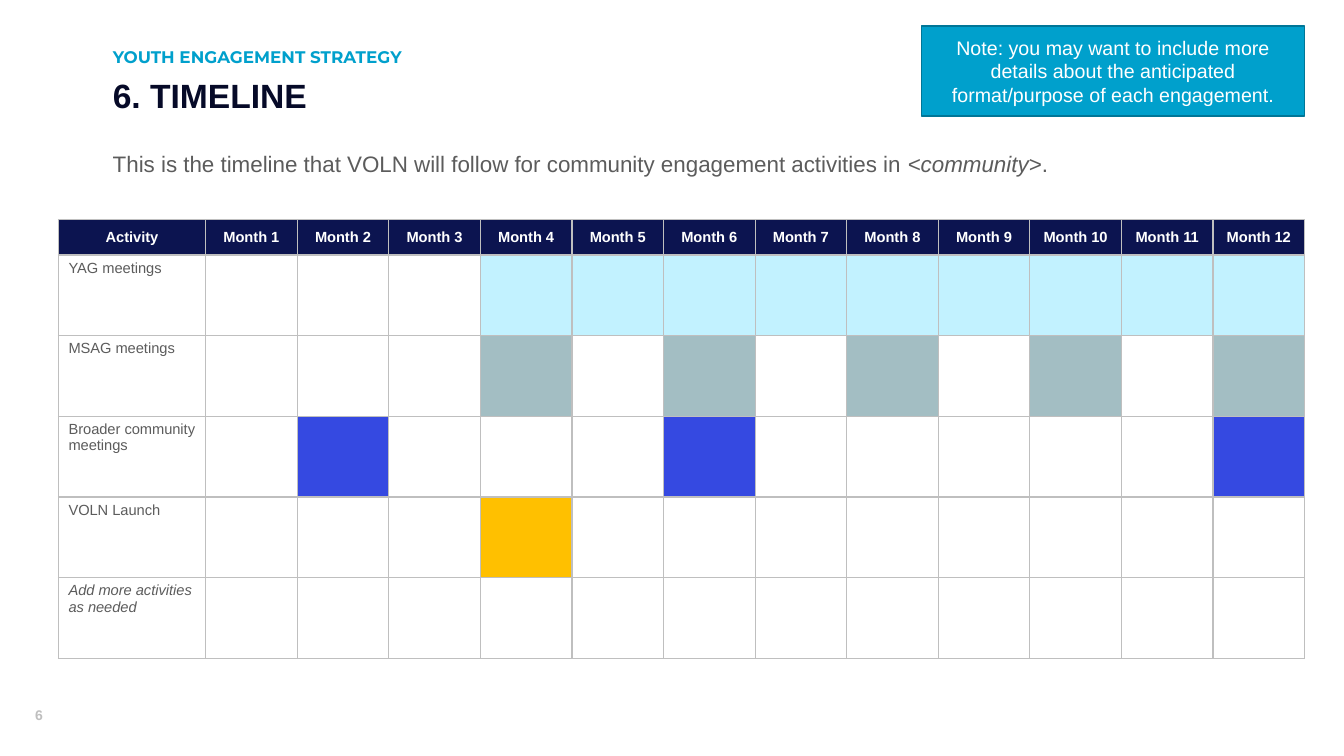
"""Build the engagement timeline slide with its twelve-month activity table."""
from dataclasses import dataclass

from lxml import etree
from pptx import Presentation
from pptx.dml.color import RGBColor
from pptx.enum.shapes import MSO_SHAPE
from pptx.enum.text import MSO_ANCHOR, PP_ALIGN
from pptx.oxml.ns import qn
from pptx.util import Inches, Pt

CENTER = PP_ALIGN.CENTER
LEFT = PP_ALIGN.LEFT
MIDDLE = MSO_ANCHOR.MIDDLE
TOP = MSO_ANCHOR.TOP
RECTANGLE = MSO_SHAPE.RECTANGLE

WHITE = "FFFFFF"
NAVY = "0C1450"
INK = "060A28"
CYAN = "00A0CC"
TEAL = "007697"
GRAY = "5C5C5C"
SILVER = "BFBFBF"

MONTH_COUNT = 12
TABLE_LEFT, TABLE_TOP, TABLE_WIDTH = 0.58, 2.18, 12.36
ACTIVITY_WIDTH, HEADER_HEIGHT, ROW_HEIGHT = 1.46, 0.35, 0.8


@dataclass(frozen=True)
class Span:
    text: str
    italic: bool = False


@dataclass(frozen=True)
class Label:
    left: float
    top: float
    width: float
    height: float
    spans: tuple[Span, ...]
    size: float
    color: str
    bold: bool = False
    font: str = "Arial"
    anchor: MSO_ANCHOR = TOP
    line_spacing: float = 0.9


@dataclass(frozen=True)
class Activity:
    name: str
    color: str = WHITE
    months: tuple[int, ...] = ()
    italic: bool = False


LABELS = (
    Label(0.25, 6.96, 0.53, 0.27, (Span("6"),), 10, SILVER, bold=True,
          anchor=MIDDLE, line_spacing=1.0),
    Label(1.02, 0.74, 5.38, 1.45, (Span("6. TIMELINE"),), 24, INK, bold=True),
    Label(1.02, 0.46, 4.05, 0.23, (Span("YOUTH ENGAGEMENT STRATEGY"),), 12, CYAN,
          bold=True, font="Montserrat", anchor=MIDDLE),
    Label(1.02, 1.47, 11.3, 4.3,
          (Span("This is the timeline that VOLN will follow for community "
                "engagement activities in "),
           Span("<community>", italic=True), Span(".")), 16, GRAY),
)

ACTIVITIES = (
    Activity("YAG meetings", "C2F2FF", tuple(range(4, 13))),
    Activity("MSAG meetings", "A3BEC3", tuple(range(4, 13, 2))),
    Activity("Broader community meetings", "3549E1", (2, 6, 12)),
    Activity("VOLN Launch", "FFC000", (4,)),
    Activity("Add more activities as needed", italic=True),
)


def rgb(color: str) -> RGBColor:
    """Turn a hex string into a colour."""
    return RGBColor.from_string(color)


def add_span(para, text: str, *, size: float, color: str, font: str = "Arial",
             bold: bool = False, italic: bool = False) -> None:
    """Append formatted text to a paragraph."""
    span = para.add_run()
    span.text = text
    span.font.name = font
    span.font.size = Pt(size)
    span.font.bold = bold
    span.font.italic = italic
    span.font.color.rgb = rgb(color)


def add_label(page, label: Label) -> None:
    """Draw one free-standing text box."""
    box = page.shapes.add_textbox(Inches(label.left), Inches(label.top),
                                  Inches(label.width), Inches(label.height))
    frame = box.text_frame
    frame.word_wrap = True
    frame.vertical_anchor = label.anchor
    para = frame.paragraphs[0]
    para.line_spacing = label.line_spacing
    for span in label.spans:
        add_span(para, span.text, size=label.size, color=label.color,
                 font=label.font, bold=label.bold, italic=span.italic)


def add_note(page, text: str) -> None:
    """Draw the note in the top right corner."""
    box = page.shapes.add_shape(RECTANGLE, Inches(9.14), Inches(0.26),
                                Inches(3.8), Inches(0.89))
    box.shadow.inherit = False
    box.fill.solid()
    box.fill.fore_color.rgb = rgb(CYAN)
    box.line.color.rgb = rgb(TEAL)
    box.line.width = Pt(1)
    box.text_frame.word_wrap = True
    box.text_frame.vertical_anchor = MIDDLE
    para = box.text_frame.paragraphs[0]
    para.alignment = CENTER
    add_span(para, text, size=14, color=WHITE)


def style_cell(cell, color: str) -> None:
    """Give a cell its four borders and its fill."""
    properties = cell._tc.get_or_add_tcPr()
    for side in ("lnL", "lnR", "lnT", "lnB"):
        border = etree.SubElement(properties, qn(f"a:{side}"), w=str(Pt(1)))
        fill = etree.SubElement(border, qn("a:solidFill"))
        etree.SubElement(fill, qn("a:srgbClr"), val=SILVER)
    cell.fill.solid()
    cell.fill.fore_color.rgb = rgb(color)


def write_cell(cell, text: str, *, color: str, bold: bool = False,
               italic: bool = False, align: PP_ALIGN = LEFT,
               anchor: MSO_ANCHOR = TOP) -> None:
    """Write formatted text into a cell."""
    cell.vertical_anchor = anchor
    para = cell.text_frame.paragraphs[0]
    para.alignment = align
    add_span(para, text, size=10.5, color=color, bold=bold, italic=italic)


def add_timeline(page) -> None:
    """Draw the table of activities by month."""
    height = HEADER_HEIGHT + ROW_HEIGHT * len(ACTIVITIES)
    table = page.shapes.add_table(
        len(ACTIVITIES) + 1, MONTH_COUNT + 1, Inches(TABLE_LEFT),
        Inches(TABLE_TOP), Inches(TABLE_WIDTH), Inches(height)).table
    table.horz_banding = False
    month_width = (TABLE_WIDTH - ACTIVITY_WIDTH) / MONTH_COUNT
    for index, column in enumerate(table.columns):
        column.width = Inches(month_width if index else ACTIVITY_WIDTH)
    for index, row in enumerate(table.rows):
        row.height = Inches(ROW_HEIGHT if index else HEADER_HEIGHT)

    for month in range(MONTH_COUNT + 1):
        cell = table.cell(0, month)
        style_cell(cell, NAVY)
        write_cell(cell, f"Month {month}" if month else "Activity", color=WHITE,
                   bold=True, align=CENTER, anchor=MIDDLE)
    for row_index, activity in enumerate(ACTIVITIES, start=1):
        for month in range(MONTH_COUNT + 1):
            color = activity.color if month in activity.months else WHITE
            style_cell(table.cell(row_index, month), color)
        write_cell(table.cell(row_index, 0), activity.name, color=GRAY,
                   italic=activity.italic)


def main() -> None:
    """Assemble and save the deck."""
    deck = Presentation()
    deck.slide_width = Inches(13.33)
    deck.slide_height = Inches(7.5)
    page = deck.slides.add_slide(deck.slide_layouts[6])
    for label in LABELS:
        add_label(page, label)
    add_timeline(page)
    add_note(page, "Note: you may want to include more details about the "
                   "anticipated format/purpose of each engagement.")
    deck.save("out.pptx")


if __name__ == "__main__":
    main()
